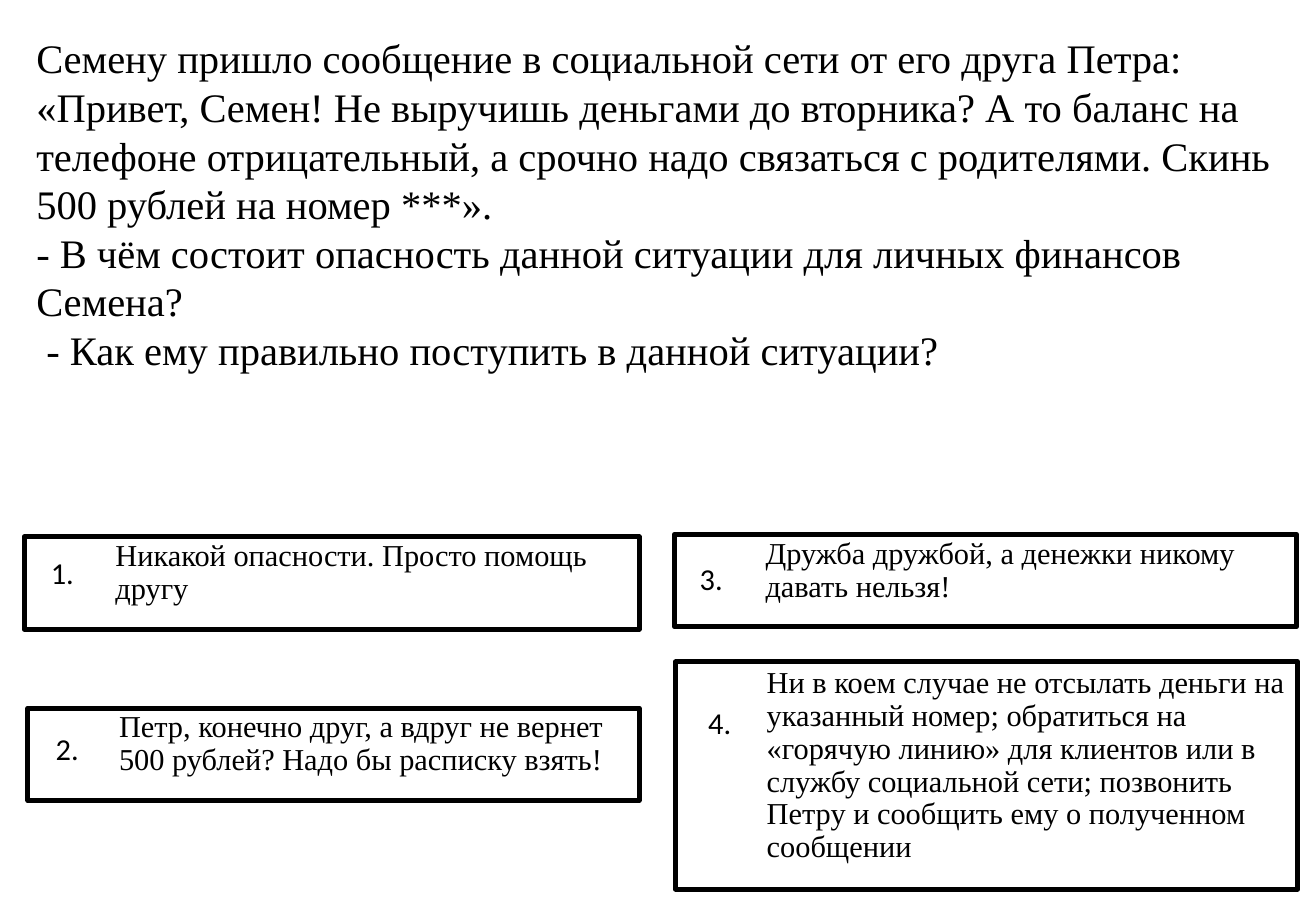
from pptx import Presentation
from pptx.dml.color import RGBColor
from pptx.enum.shapes import MSO_SHAPE
from pptx.enum.text import MSO_ANCHOR, PP_ALIGN
from pptx.util import Inches, Pt

BLACK = RGBColor(0, 0, 0)
WHITE = RGBColor(255, 255, 255)
SERIF, SANS = "Times New Roman", "Calibri"

STORY = [
    "Семену пришло сообщение в социальной сети от его друга Петра: «Привет, Семен! "
    "Не выручишь деньгами до вторника? А то баланс на телефоне отрицательный, "
    "а срочно надо связаться с родителями. Скинь 500 рублей на номер ***».",
    "- В чём состоит опасность данной ситуации для личных финансов Семена?",
    " - Как ему правильно поступить в данной ситуации?",
]
STORY_AREA = (0.2, 0.21, 10.41, 2.93)

# answer, its box, area of its number
ANSWERS = [
    ("Никакой опасности. Просто помощь другу",
     (0.2, 4.42, 5.06, 0.76), (0.32, 4.51, 0.54, 0.4)),
    ("Петр, конечно друг, а вдруг не вернет 500 рублей? Надо бы расписку взять!",
     (0.23, 5.83, 5.03, 0.76), (0.36, 5.96, 0.51, 0.4)),
    ("Дружба дружбой, а денежки никому давать нельзя!",
     (5.55, 4.4, 5.12, 0.76), (5.66, 4.56, 0.57, 0.4)),
    ("Ни в коем случае не отсылать деньги на указанный номер; обратиться на "
     "«горячую линию» для клиентов или в службу социальной сети; позвонить Петру "
     "и сообщить ему о полученном сообщении",
     (5.56, 5.45, 5.12, 1.87), (5.73, 5.75, 0.53, 0.4)),
]
ANSWER_FRAME = {
    "margin_left": Inches(0.75),
    "margin_top": 0,
    "margin_right": 0,
    "margin_bottom": Inches(0.16),
    "vertical_anchor": MSO_ANCHOR.MIDDLE,
}


def write(shape, lines, size, font, frame_format, line_spacing=None):
    """Fill a shape with one left-aligned paragraph per line."""
    frame = shape.text_frame
    frame.word_wrap = True
    for name, value in frame_format.items():
        setattr(frame, name, value)
    frame.text = "\n".join(lines)
    for paragraph in frame.paragraphs:
        paragraph.alignment = PP_ALIGN.LEFT
        paragraph.line_spacing = line_spacing
        paragraph.font.size = Pt(size)
        paragraph.font.name = font
        paragraph.font.color.rgb = BLACK


def add_answer_box(slide, area):
    box = slide.shapes.add_shape(MSO_SHAPE.RECTANGLE, *map(Inches, area))
    box.shadow.inherit = False
    box.fill.solid()
    box.fill.fore_color.rgb = WHITE
    box.line.color.rgb = BLACK
    box.line.width = Pt(3)
    return box


def main():
    deck = Presentation()
    deck.slide_width, deck.slide_height = Inches(10.83), Inches(7.5)
    slide = deck.slides.add_slide(deck.slide_layouts[6])

    story = slide.shapes.add_textbox(*map(Inches, STORY_AREA))
    write(story, STORY, 24, SERIF, {"vertical_anchor": MSO_ANCHOR.MIDDLE})

    for number, (answer, box_area, number_area) in enumerate(ANSWERS, 1):
        write(add_answer_box(slide, box_area), [answer], 18, SERIF, ANSWER_FRAME, 0.9)
        label = slide.shapes.add_textbox(*map(Inches, number_area))
        write(label, [f"{number}."], 18, SANS, {})

    deck.save("out.pptx")


if __name__ == "__main__":
    main()
